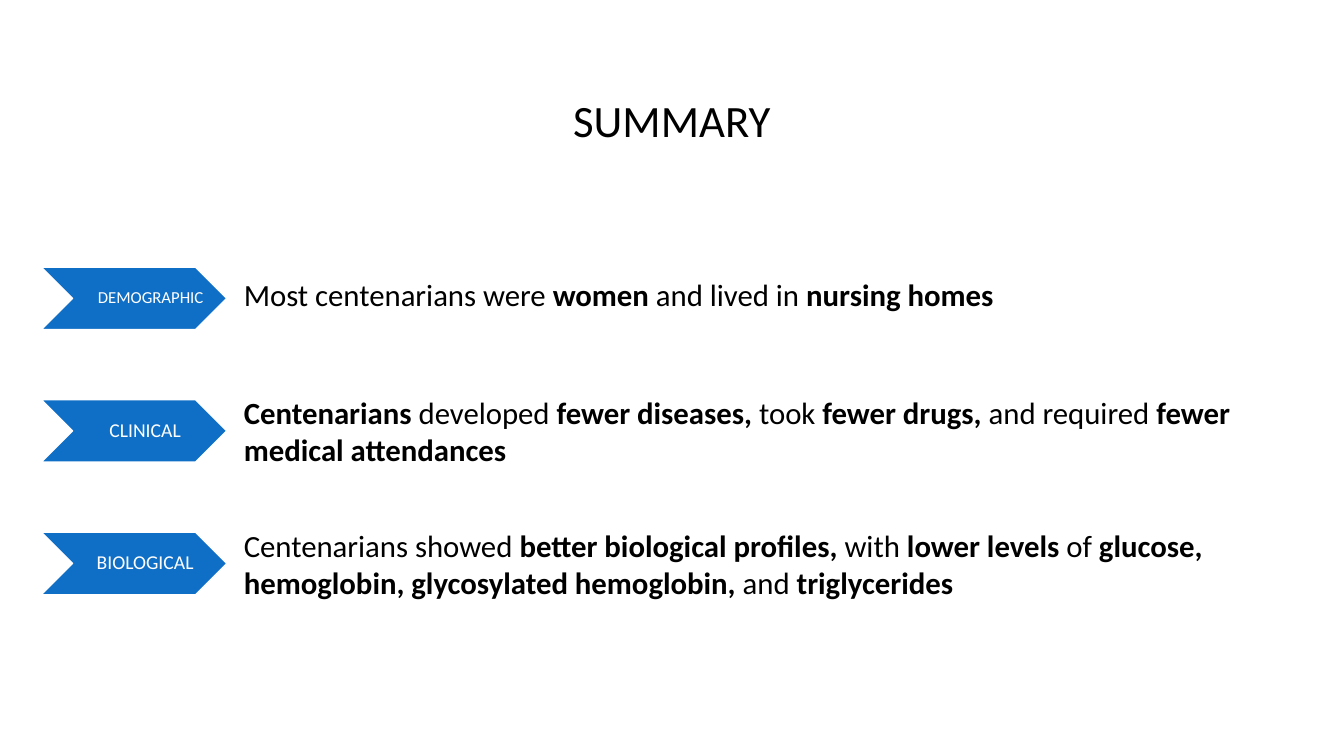
from pptx import Presentation
from pptx.dml.color import RGBColor
from pptx.enum.shapes import MSO_SHAPE as Shape
from pptx.enum.text import MSO_ANCHOR as Anchor, PP_ALIGN as Align
from pptx.util import Inches, Pt

FONT = "Calibri"
BLUE, WHITE, BLACK = "0F6FC6", "FFFFFF", "000000"
FIRST_TOP, LAST_TOP = 2.65, 5.28
ROW_LEFT, ROW_WIDTH, ROW_HEIGHT = 0.41, 12.35, 0.62

# Label, label size, label box (offset x, y, width, height),
# statement box (offset y, width, height), statement runs (text, bold)
FINDINGS = [
    ("DEMOGRAPHIC", 12, (0.43, 0, 1.24, 0.62), (0.04, 9.44, 0.47), [
        ("Most centenarians were ", False), ("women", True),
        (" and lived in ", False), ("nursing homes", True)]),
    ("CLINICAL", 14, (0.35, 0.12, 1.29, 0.38), (-0.11, 10.13, 0.84), [
        ("Centenarians ", True), ("developed ", False),
        ("fewer diseases, ", True), ("took ", False),
        ("fewer drugs, ", True), ("and required ", False),
        ("fewer medical attendances", True)]),
    ("BIOLOGICAL", 14, (0.35, 0.12, 1.29, 0.38), (-0.1, 10.44, 0.84), [
        ("Centenarians showed ", False), ("better biological profiles, ", True),
        ("with ", False), ("lower levels", True), (" of ", False),
        ("glucose, hemoglobin, glycosylated hemoglobin, ", True),
        ("and ", False), ("triglycerides", True)]),
]


def color(hex_string):
    return RGBColor.from_string(hex_string)


def set_margins(frame, left, top, right, bottom):
    frame.margin_left, frame.margin_top = Inches(left), Inches(top)
    frame.margin_right, frame.margin_bottom = Inches(right), Inches(bottom)


def add_span(para, text, size, hex_string, bold=False):
    span = para.add_run()
    span.text = text
    span.font.name, span.font.size, span.font.bold = FONT, Pt(size), bold
    span.font.color.rgb = color(hex_string)


def add_text(page, left, top, width, height):
    box = page.shapes.add_textbox(*map(Inches, (left, top, width, height)))
    box.text_frame.word_wrap = True
    return box.text_frame


def add_title(page, left, top, width, height):
    title = page.shapes.title
    title.left, title.top = Inches(left), Inches(top)
    title.width, title.height = Inches(width), Inches(height)
    frame = title.text_frame
    frame.vertical_anchor = Anchor.BOTTOM
    set_margins(frame, 0.13, 0.13, 0.13, 0.13)
    para = frame.paragraphs[0]
    para.alignment, para.line_spacing = Align.CENTER, 0.9
    add_span(para, "SUMMARY", 32, BLACK)


def add_finding(page, left, top, height, finding):
    label, size, label_box, statement_box, runs = finding

    # Chevron
    chevron = page.shapes.add_shape(
        Shape.CHEVRON, *map(Inches, (left, top, 1.84, height)))
    chevron.shadow.inherit = False
    chevron.fill.solid()
    chevron.fill.fore_color.rgb = color(BLUE)
    chevron.line.color.rgb = color(WHITE)
    chevron.line.width = Pt(1)

    # Label on the chevron
    x, y, label_width, label_height = label_box
    frame = add_text(page, left + x, top + y, label_width, label_height)
    frame.vertical_anchor = Anchor.MIDDLE
    set_margins(frame, 0.11, 0.04, 0.04, 0.04)
    para = frame.paragraphs[0]
    para.alignment, para.line_spacing = Align.CENTER, 0.9
    add_span(para, label, size, WHITE)

    # Statement beside it
    y, width, statement_height = statement_box
    frame = add_text(page, left + 1.91, top + y, width, statement_height)
    for text, bold in runs:
        add_span(frame.paragraphs[0], text, 22, BLACK, bold)


def main():
    deck = Presentation()
    deck.slide_width, deck.slide_height = Inches(13.33), Inches(7.5)
    page = deck.slides.add_slide(deck.slide_layouts[5])
    add_title(page, 2.91, 0.14, 7.51, 1.45)
    pitch = (LAST_TOP - FIRST_TOP) / (len(FINDINGS) - 1)
    for index, finding in enumerate(FINDINGS):
        add_finding(page, ROW_LEFT, FIRST_TOP + index * pitch, ROW_HEIGHT, finding)
    deck.save("out.pptx")


if __name__ == "__main__":
    main()
